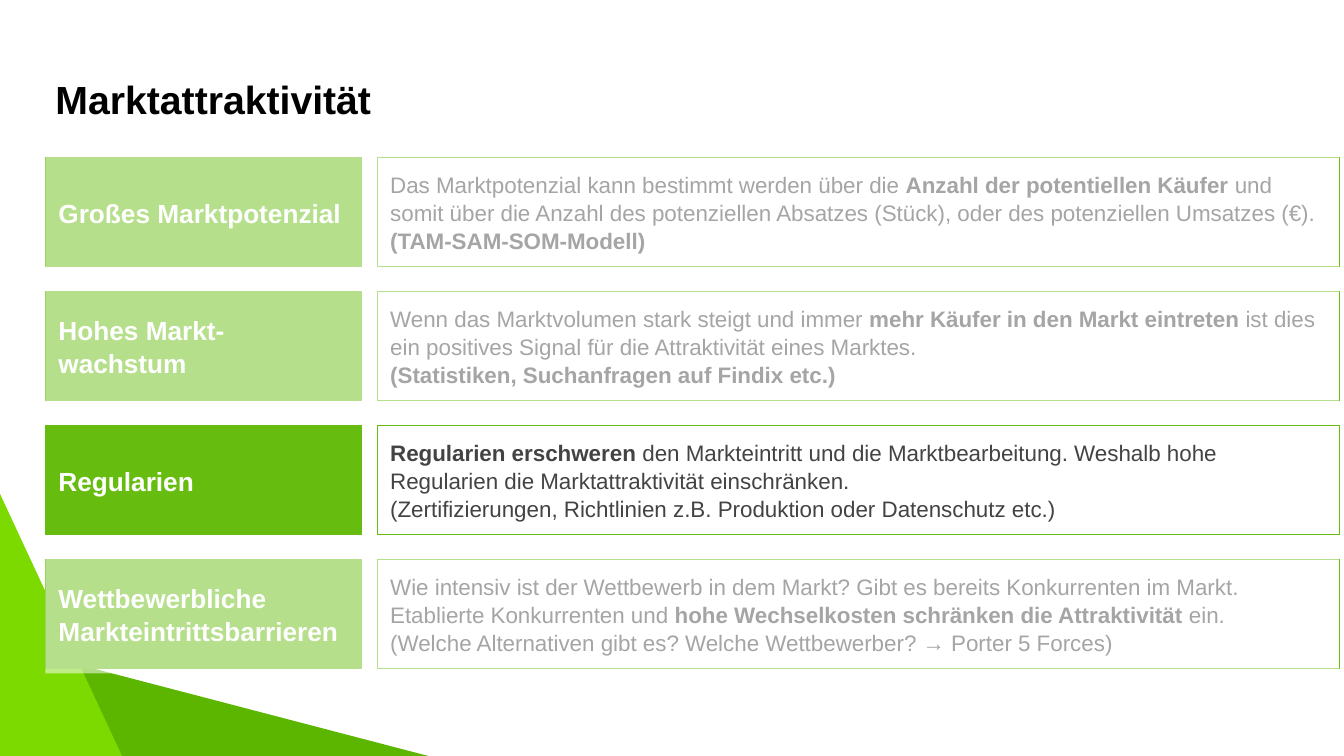
from lxml import etree
from pptx import Presentation
from pptx.dml.color import RGBColor
from pptx.enum.shapes import MSO_SHAPE
from pptx.enum.text import MSO_ANCHOR, PP_ALIGN
from pptx.oxml.ns import qn
from pptx.util import Inches, Pt

RECTANGLE = MSO_SHAPE.RECTANGLE
RIGHT_TRIANGLE = MSO_SHAPE.RIGHT_TRIANGLE
TOP, MIDDLE = MSO_ANCHOR.TOP, MSO_ANCHOR.MIDDLE
LEFT = PP_ALIGN.LEFT

BLACK = RGBColor(0x00, 0x00, 0x00)
WHITE = RGBColor(0xFF, 0xFF, 0xFF)
GREY = RGBColor(0x43, 0x43, 0x43)
GREEN = RGBColor(0x67, 0xBD, 0x0F)
DARK_GREEN = RGBColor(0x5C, 0xB6, 0x00)
LIGHT_GREEN = RGBColor(0x7D, 0xDA, 0x00)

# Each criterion: label, then paragraphs of (text, bold) runs
CRITERIA = [
    ("Großes Marktpotenzial", [
        [("Das Marktpotenzial kann bestimmt werden über die ", False),
         ("Anzahl der potentiellen Käufer", True),
         (" und somit über die Anzahl des potenziellen Absatzes (Stück), "
          "oder des potenziellen Umsatzes (€).", False)],
        [("(TAM-SAM-SOM-Modell)", True)]]),
    ("Hohes Markt- wachstum", [
        [("Wenn das Marktvolumen stark steigt und immer ", False),
         ("mehr Käufer in den Markt eintreten", True),
         (" ist dies ein positives Signal für die Attraktivität eines Marktes.", False)],
        [("(Statistiken, Suchanfragen auf Findix etc.)", True)]]),
    ("Regularien", [
        [("Regularien erschweren", True),
         (" den Markteintritt und die Marktbearbeitung. Weshalb hohe Regularien "
          "die Marktattraktivität einschränken.", False)],
        [("(Zertifizierungen, Richtlinien z.B. Produktion oder Datenschutz etc.)", False)]]),
    ("Wettbewerbliche Markteintrittsbarrieren", [
        [("Wie intensiv ist der Wettbewerb in dem Markt? Gibt es bereits Konkurrenten "
          "im Markt. Etablierte Konkurrenten und ", False),
         ("hohe Wechselkosten schränken die Attraktivität", True),
         (" ein.", False)],
        [("(Welche Alternativen gibt es? Welche Wettbewerber? → Porter 5 Forces)", False)]]),
]


class MarketSlide:
    font = "Arial"

    def __init__(self, prs):
        self.slide = prs.slides.add_slide(prs.slide_layouts[5])

    def fill_text(self, frame, paragraphs, size, color, anchor, inset, spacing=1.0):
        frame.word_wrap = True
        frame.vertical_anchor = anchor
        frame.margin_left = frame.margin_right = Inches(inset)
        frame.margin_top = frame.margin_bottom = Inches(inset)
        for i, runs in enumerate(paragraphs):
            paragraph = frame.add_paragraph() if i else frame.paragraphs[0]
            paragraph.alignment = LEFT
            paragraph.line_spacing = spacing
            for text, bold in runs:
                run = paragraph.add_run()
                run.text = text
                run.font.name = self.font
                run.font.size = Pt(size)
                run.font.bold = bold
                run.font.color.rgb = color

    def title(self, text, left, top, width, height):
        heading = self.slide.shapes.title
        heading.left, heading.top = Inches(left), Inches(top)
        heading.width, heading.height = Inches(width), Inches(height)
        self.fill_text(heading.text_frame, [[(text, True)]], 28, BLACK, TOP, 0.1)

    def shape(self, kind, left, top, width, height, fill, line=None):
        figure = self.slide.shapes.add_shape(
            kind, Inches(left), Inches(top), Inches(width), Inches(height))
        figure.shadow.inherit = False
        figure.fill.solid()
        figure.fill.fore_color.rgb = fill
        if line is None:
            figure.line.fill.background()
        else:
            figure.line.color.rgb = line
            figure.line.width = Pt(0.75)
        return figure

    def box(self, left, top, width, height, fill, paragraphs, size, color, spacing):
        panel = self.shape(RECTANGLE, left, top, width, height, fill, GREEN)
        self.fill_text(panel.text_frame, paragraphs, size, color, MIDDLE, 0.13, spacing)

    def veil(self, left, top, width, height, opacity):
        cover = self.shape(RECTANGLE, left, top, width, height, WHITE)
        color = cover.element.spPr.find(qn("a:solidFill"))[0]
        etree.SubElement(color, qn("a:alpha")).set("val", str(opacity * 1000))


def main():
    prs = Presentation()
    prs.slide_width, prs.slide_height = Inches(13.33), Inches(7.5)
    market = MarketSlide(prs)

    # Corner decoration
    market.shape(RIGHT_TRIANGLE, 0, 6.39, 4.25, 1.11, DARK_GREEN)
    market.shape(RIGHT_TRIANGLE, 0, 4.9, 1.21, 2.6, LIGHT_GREEN)

    market.title("Marktattraktivität", 0.45, 0.65, 12.42, 0.84)

    # Criteria rows
    for row, (label, description) in enumerate(CRITERIA):
        top = 1.56 + 1.33 * row
        market.box(0.45, top, 3.14, 1.08, GREEN, [[(label, True)]], 18.7, WHITE, 1.06)
        market.box(3.74, top, 9.55, 1.08, WHITE, description, 16, GREY, 1.04)

    # Veils fade every row but the third
    for top, height in ((5.44, 1.24), (1.36, 2.81)):
        market.veil(0.45, top, 12.83, height, 52)

    prs.save("out.pptx")


if __name__ == "__main__":
    main()
